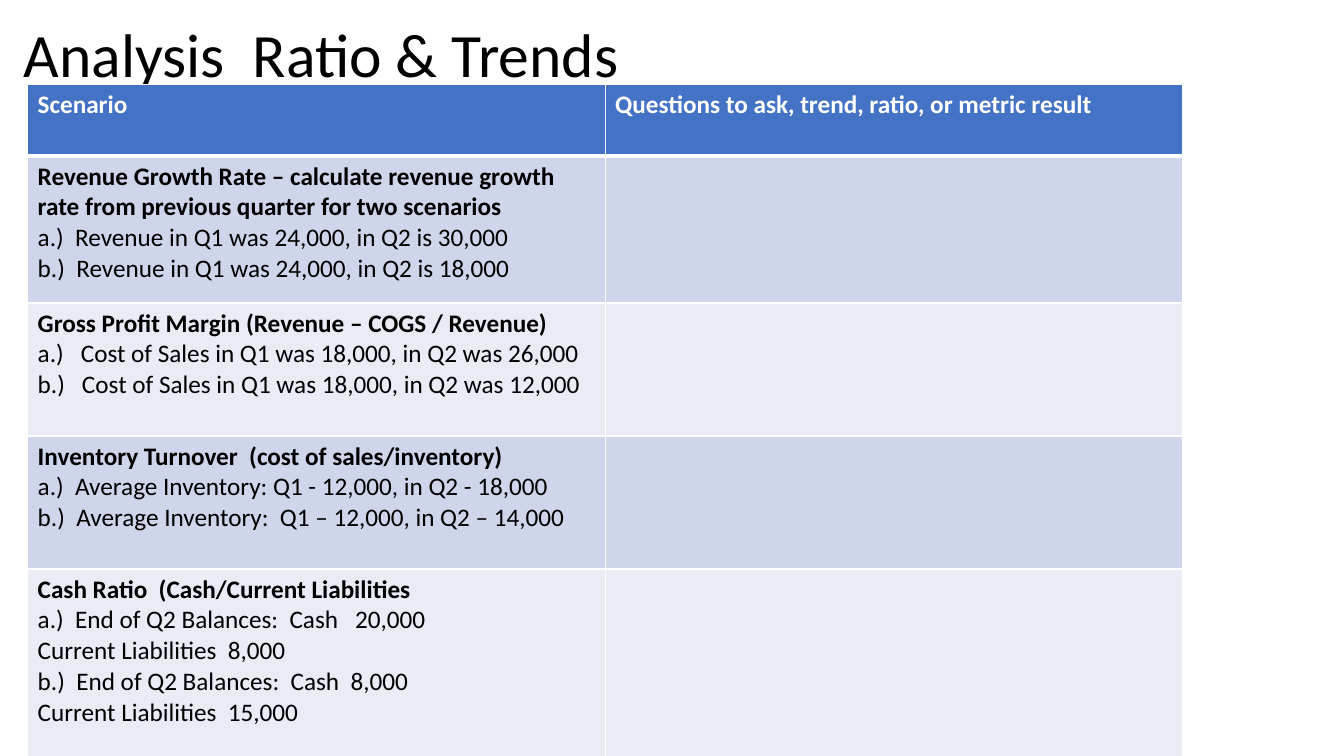
from lxml import etree
from pptx import Presentation
from pptx.dml.color import RGBColor
from pptx.enum import text
from pptx.oxml import ns
from pptx.util import Pt

TITLE = "Analysis  Ratio & Trends"
HEADERS = ["Scenario", "Questions to ask, trend, ratio, or metric result"]
SCENARIOS = [
    ("Revenue Growth Rate – calculate revenue growth rate from previous quarter for two scenarios",
     "a.)  Revenue in Q1 was 24,000, in Q2 is 30,000",
     "b.)  Revenue in Q1 was 24,000, in Q2 is 18,000"),
    ("Gross Profit Margin (Revenue – COGS / Revenue)",
     "a.)   Cost of Sales in Q1 was 18,000, in Q2 was 26,000",
     "b.)   Cost of Sales in Q1 was 18,000, in Q2 was 12,000"),
    ("Inventory Turnover  (cost of sales/inventory)",
     "a.)  Average Inventory: Q1 - 12,000, in Q2 - 18,000",
     "b.)  Average Inventory:  Q1 – 12,000, in Q2 – 14,000"),
    ("Cash Ratio  (Cash/Current Liabilities",
     "a.)  End of Q2 Balances:  Cash   20,000",
     "Current Liabilities  8,000",
     "b.)  End of Q2 Balances:  Cash  8,000",
     "Current Liabilities  15,000"),
]
ROW_HEIGHTS = [51, 105, 95, 95, 134]
COL_WIDTH = 412.5

FONT = "Calibri"
BLACK = RGBColor(0x00, 0x00, 0x00)
WHITE = RGBColor(0xFF, 0xFF, 0xFF)
BLUE = RGBColor(0x44, 0x72, 0xC4)
BANDS = [RGBColor(0xCF, 0xD5, 0xEA), RGBColor(0xE9, 0xEB, 0xF5)]


def style(p, size, color, bold=False):
    p.font.name = FONT
    p.font.size = Pt(size)
    p.font.color.rgb = color
    p.font.bold = bold


def set_borders(cell, widths):
    tcPr = cell._tc.get_or_add_tcPr()
    for i, (side, width) in enumerate(widths.items()):
        ln = etree.Element(ns.qn(f"a:ln{side}"), w=str(Pt(width)))
        fill = etree.SubElement(ln, ns.qn("a:solidFill"))
        etree.SubElement(fill, ns.qn("a:srgbClr"), val=str(WHITE))
        tcPr.insert(i, ln)


def fill_cell(cell, lines, row):
    header = row == 0
    cell.fill.solid()
    cell.fill.fore_color.rgb = BLUE if header else BANDS[(row - 1) % 2]
    set_borders(cell, {"L": 1, "R": 1, "T": 3 if row == 1 else 1, "B": 3 if header else 1})
    tf = cell.text_frame
    tf.text = "\n".join(lines)
    for i, p in enumerate(tf.paragraphs):
        style(p, 18, WHITE if header else BLACK, i == 0)


prs = Presentation()
prs.slide_width, prs.slide_height = Pt(960), Pt(540)
s = prs.slides.add_slide(prs.slide_layouts[6])

tf = s.shapes.add_textbox(Pt(10), Pt(12), Pt(828), Pt(58.5)).text_frame
tf.word_wrap = True
tf.vertical_anchor = text.MSO_ANCHOR.MIDDLE
p = tf.paragraphs[0]
p.text = TITLE
p.line_spacing = 0.9
style(p, 44, BLACK)

rows = [[[h] for h in HEADERS]] + [[lines, []] for lines in SCENARIOS]
table = s.shapes.add_table(len(rows), len(HEADERS), Pt(19.75), Pt(60.5),
                           Pt(COL_WIDTH * len(HEADERS)), Pt(sum(ROW_HEIGHTS))).table
for col in table.columns:
    col.width = Pt(COL_WIDTH)
for r, (height, cells) in enumerate(zip(ROW_HEIGHTS, rows)):
    table.rows[r].height = Pt(height)
    for c, lines in enumerate(cells):
        fill_cell(table.cell(r, c), lines, r)

prs.save("out.pptx")
